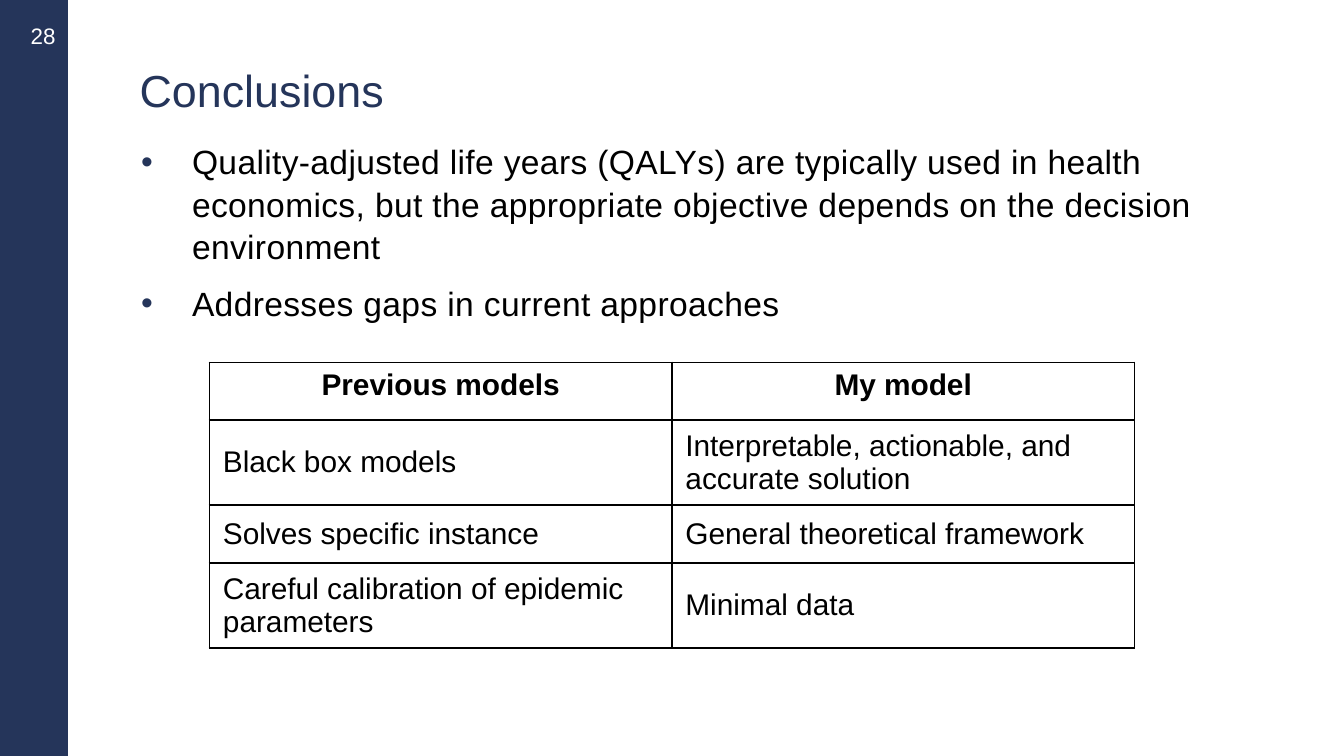
"""Build the Conclusions slide: side band, title, bullets and a comparison table."""
from dataclasses import dataclass

import lxml.etree
import pptx
import pptx.dml.color
import pptx.enum.shapes
import pptx.enum.text
import pptx.oxml.ns
import pptx.util

Cm, Pt = pptx.util.Cm, pptx.util.Pt
RGB = pptx.dml.color.RGBColor
ALIGN, ANCHOR = pptx.enum.text.PP_ALIGN, pptx.enum.text.MSO_ANCHOR
qn = pptx.oxml.ns.qn


@dataclass(frozen=True)
class Theme:
    navy: str = "25355A"
    black: str = "000000"
    white: str = "FFFFFF"
    font: str = "Arial"
    number: int = 12
    title: int = 24
    body: int = 18
    cell: int = 16


theme = Theme()


def add_text(p, text, size, color, bold=False):
    r = p.add_run()
    r.text = text
    for name, value in {"name": theme.font, "size": Pt(size), "bold": bold}.items():
        setattr(r.font, name, value)
    r.font.color.rgb = RGB.from_string(color)
    return r


def add_box(left, top, width, height, **frame):
    tf = s.shapes.add_textbox(Cm(left), Cm(top), Cm(width), Cm(height)).text_frame
    for name, value in frame.items():
        setattr(tf, name, value)
    return tf


prs = pptx.Presentation()
prs.slide_width, prs.slide_height = Cm(25.4), Cm(14.29)
s = prs.slides.add_slide(prs.slide_layouts[6])

band = s.shapes.add_shape(pptx.enum.shapes.MSO_SHAPE.RECTANGLE, 0, 0, Cm(1.27), Cm(14.29))
band.shadow.inherit = False
band.fill.solid()
band.fill.fore_color.rgb = band.line.color.rgb = RGB.from_string(theme.navy)
band.line.width = Pt(0.75)

tf = add_box(0.18, 0.03, 1.27, 1.27, word_wrap=False, vertical_anchor=ANCHOR.MIDDLE,
             margin_left=Cm(0.13), margin_right=Cm(0.13), margin_top=0, margin_bottom=0)
p = tf.paragraphs[0]
p.alignment = ALIGN.CENTER
add_text(p, "28", theme.number, theme.white)

tf = add_box(2.64, 0.99, 21.39, 1.35, word_wrap=True, vertical_anchor=ANCHOR.BOTTOM, margin_left=0)
p = tf.paragraphs[0]
p.line_spacing = 0.85
add_text(p, "Conclusions", theme.title, theme.navy)

bullets = [
    "Quality-adjusted life years (QALYs) are typically used in health economics, "
    "but the appropriate objective depends on the decision environment",
    "Addresses gaps in current approaches",
]
tf = add_box(2.67, 2.51, 21.39, 10.44, word_wrap=True, margin_left=0, margin_right=0)
for i, text in enumerate(bullets):
    p = tf.add_paragraph() if i else tf.paragraphs[0]
    pPr = p._p.get_or_add_pPr()
    pPr.set("marL", str(Cm(0.96)))
    pPr.set("indent", str(-Cm(0.96)))
    color = lxml.etree.SubElement(pPr, qn("a:buClr"))
    lxml.etree.SubElement(color, qn("a:srgbClr"), val=theme.navy)
    lxml.etree.SubElement(pPr, qn("a:buFont"), typeface=theme.font)
    lxml.etree.SubElement(pPr, qn("a:buChar"), char="•")
    spacing = {"line_spacing": 1.05, "space_before": Pt(3.6 if i else 0), "space_after": Pt(4.3)}
    for name, value in spacing.items():
        setattr(p, name, value)
    r = add_text(p, text, theme.body, theme.black)
    r._r.get_or_add_rPr().set("spc", "20")

rows = [
    ("Previous models", "My model"),
    ("Black box models", "Interpretable, actionable, and accurate solution"),
    ("Solves specific instance", "General theoretical framework"),
    ("Careful calibration of epidemic parameters", "Minimal data"),
]
table = s.shapes.add_table(len(rows), 2, Cm(3.96), Cm(6.85), Cm(17.48), Cm(4.36)).table
table.first_row = table.horz_banding = False
for row, texts in zip(table.rows, rows):
    row.height = Cm(1.09)
    header = texts == rows[0]
    for cell, text in zip(row.cells, texts):
        cell.fill.background()
        cell.vertical_anchor = ANCHOR.TOP if header else ANCHOR.MIDDLE
        p = cell.text_frame.paragraphs[0]
        p.alignment = ALIGN.CENTER if header else ALIGN.LEFT
        add_text(p, text, theme.cell, theme.black, header)
        tcPr = cell._tc.get_or_add_tcPr()
        for i, side in enumerate(("lnL", "lnR", "lnT", "lnB")):
            ln = lxml.etree.Element(qn(f"a:{side}"), w=str(Pt(1)))
            fill = lxml.etree.SubElement(ln, qn("a:solidFill"))
            lxml.etree.SubElement(fill, qn("a:srgbClr"), val=theme.black)
            tcPr.insert(i, ln)

prs.save("out.pptx")
